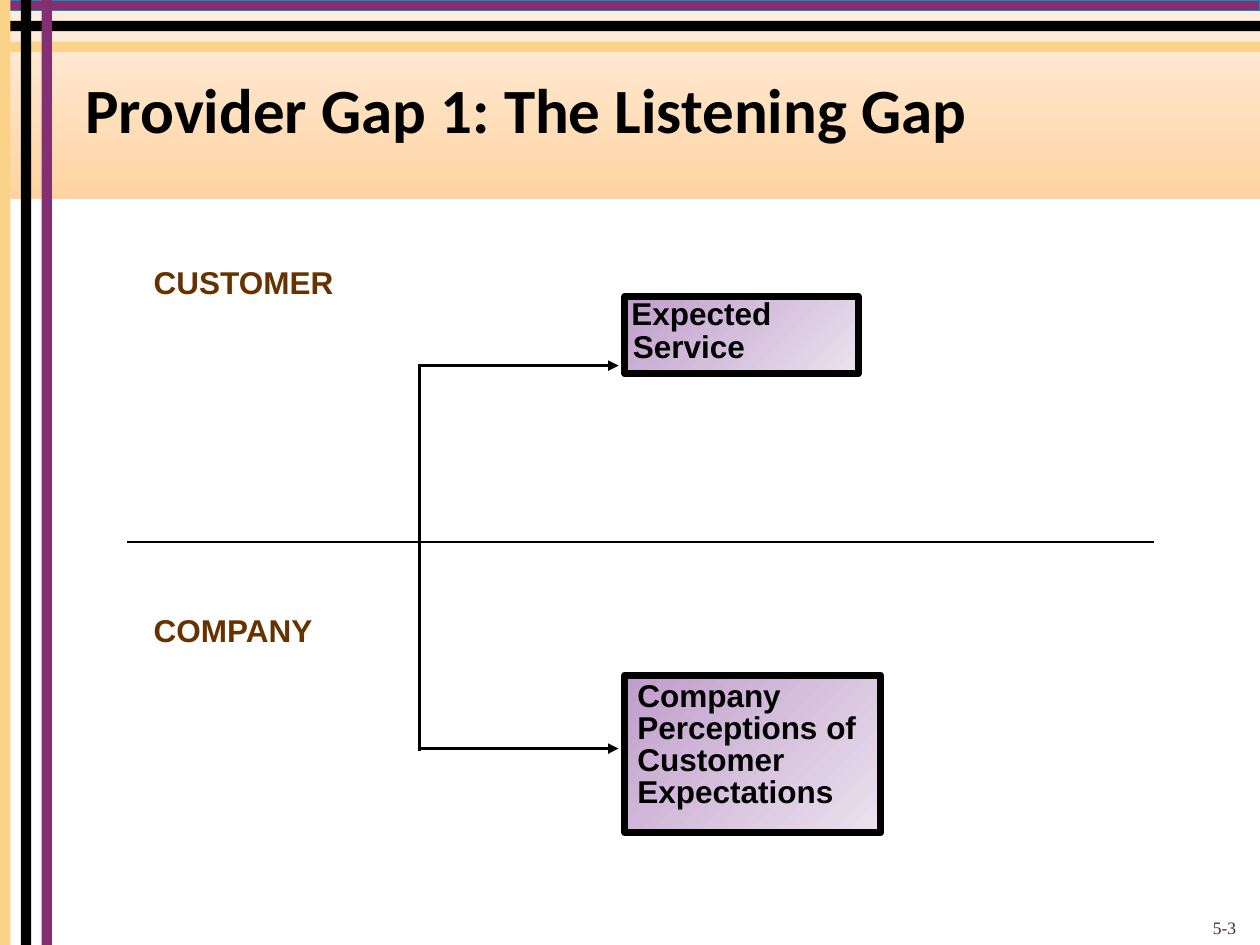
import pptx
import pptx.util
import pptx.dml.color
import pptx.enum.shapes
import pptx.enum.text
from lxml import etree

Cm, Pt = pptx.util.Cm, pptx.util.Pt
RGB = pptx.dml.color.RGBColor
RECT = pptx.enum.shapes.MSO_SHAPE.RECTANGLE
STRAIGHT = pptx.enum.shapes.MSO_CONNECTOR.STRAIGHT
ALIGN = pptx.enum.text.PP_ALIGN
ANCHOR = pptx.enum.text.MSO_ANCHOR

BLACK = RGB(0, 0, 0)
PLUM = RGB(0x85, 0x2F, 0x73)
GOLD = RGB(0xFB, 0xD3, 0x88)
TEAL = RGB(0x03, 0x91, 0xBD)
BROWN = RGB(0x66, 0x33, 0x00)
WINE = RGB(0x51, 0x25, 0x3A)
PEACH = (RGB(0xFF, 0xD3, 0xA0), RGB(0xFF, 0xF0, 0xE3))
LILAC = (RGB(0xC0, 0x9D, 0xCB), RGB(0xEB, 0xE2, 0xEE))

# Content, with lengths in cm
WIDE, HIGH = 25.4, 19.05
BAR, STEP = 0.21, 0.42
TITLE = "Provider Gap 1: The Listening Gap"
NUMBER = "5-3"
ROWS = [PLUM, BLACK, GOLD]      # top to bottom
COLS = [GOLD, BLACK, PLUM]      # left to right
LABELS = [("CUSTOMER", (2.97, 5.26, 3.89, 0.86)),
          ("COMPANY", (2.97, 12.27, 3.51, 0.86))]
# text, place, side and top inset, line spacing, left indent
BOXES = [("Company Perceptions of Customer Expectations",
          (12.6, 13.61, 5.16, 3.18), (0.25, 0.13), 0.85, 0),
         ("Expected Service",
          (12.6, 5.97, 4.7, 1.57), (0.13, 0.05), 0.88, 0.03)]
# start, end, width in points, arrowhead
STEM, TIP, UPPER, LOWER = 8.46, 12.47, 7.37, 15.09
LINES = [((2.57, 10.92), (23.27, 10.92), 1, False),
         ((STEM, UPPER - 0.04), (STEM, LOWER + 0.04), 2, False),
         ((STEM, LOWER), (TIP, LOWER), 2, True),
         ((STEM, UPPER), (TIP, UPPER), 2, True)]

deck = pptx.Presentation()
deck.slide_width, deck.slide_height = Cm(WIDE), Cm(HIGH)
slide = deck.slides.add_slide(deck.slide_layouts[5])
shapes = slide.shapes


def add_rect(place, fill, angle=0):
    """Add a rectangle; a pair of colours makes a gradient."""
    rect = shapes.add_shape(RECT, *map(Cm, place))
    rect.shadow.inherit = False
    rect.line.fill.background()
    if isinstance(fill, RGB):
        rect.fill.solid()
        rect.fill.fore_color.rgb = fill
    else:
        rect.fill.gradient()
        rect.fill.gradient_angle = angle
        for stop, color in zip(rect.fill.gradient_stops, fill):
            stop.color.rgb = color
    return rect


def write(shape, text, size, color, font="Arial", bold=True,
          align=ALIGN.LEFT, anchor=ANCHOR.TOP, inset=(0.13, 0.05),
          wrap=True, space=None):
    frame = shape.text_frame
    frame.word_wrap = wrap
    frame.vertical_anchor = anchor
    frame.margin_left = frame.margin_right = Cm(inset[0])
    frame.margin_top = frame.margin_bottom = Cm(inset[1])
    para = frame.paragraphs[0]
    para.alignment = align
    para.line_spacing = space
    run = para.add_run()
    run.text = text
    run.font.name, run.font.size, run.font.bold = font, Pt(size), bold
    run.font.color.rgb = color
    return para


def add_line(start, end, width, arrow):
    line = shapes.add_connector(STRAIGHT, *map(Cm, start + end))
    line.line.color.rgb = BLACK
    line.line.width = Pt(width)
    if arrow:
        etree.SubElement(line.line._get_or_add_ln(),
                         pptx.oxml.ns.qn("a:tailEnd"), type="triangle")
    etree.SubElement(line._element.spPr, pptx.oxml.ns.qn("a:effectLst"))


# Frame of bars
add_rect((0, 0, WIDE, 4.01), PEACH, 90)
rows = [add_rect((0, i * STEP, WIDE, BAR), c) for i, c in enumerate(ROWS)]
rows[0].line.color.rgb = TEAL
rows[0].line.width = Pt(0)
for i, color in enumerate(COLS):
    add_rect((i * STEP, 0, BAR, HIGH), color)

# Diagram
for text, place, inset, space, indent in BOXES:
    box = add_rect(place, LILAC, 315)
    box.line.color.rgb = BLACK
    box.line.width = Pt(4)
    para = write(box, text, 18, BLACK, inset=inset, space=space)
    props = para._p.get_or_add_pPr()
    props.set("marL", str(Cm(indent)))
    props.set("indent", str(-Cm(indent)))
for text, place in LABELS:
    write(shapes.add_textbox(*map(Cm, place)), text, 18, BROWN, wrap=False)
for line in LINES:
    add_line(*line)

# Title goes in front of the band
title = shapes.title
title.left, title.top, title.width, title.height = map(
    Cm, (1.47, 1.47, 23.5, 1.68))
write(title, TITLE, 36, BLACK, "Calibri", anchor=ANCHOR.MIDDLE,
      inset=(0.25, 0.13), space=0.85)
shapes._spTree.append(title._element)

write(shapes.add_textbox(*map(Cm, (19.25, 17.78, 5.92, 1.27))), NUMBER, 10,
      WINE, "Times New Roman", False, ALIGN.RIGHT, ANCHOR.BOTTOM,
      (0.25, 0.13))

deck.save("out.pptx")
